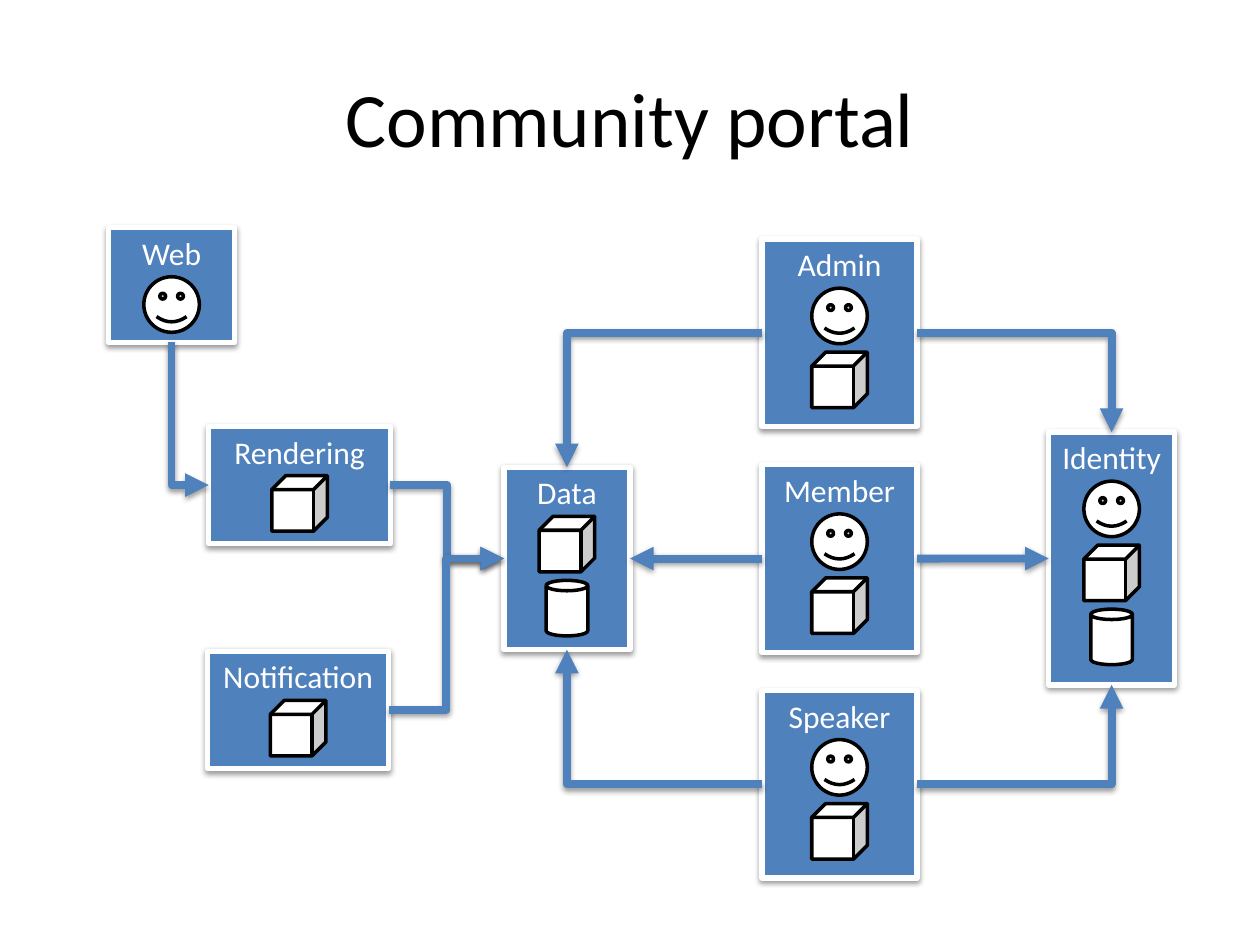
"""Build the community portal component diagram."""
from dataclasses import dataclass
from typing import Any

from pptx import Presentation
from pptx.dml.color import RGBColor
from pptx.enum.shapes import MSO_CONNECTOR, MSO_SHAPE
from pptx.enum.text import MSO_ANCHOR, PP_ALIGN
from pptx.oxml import parse_xml
from pptx.oxml.ns import nsdecls, qn
from pptx.util import Cm, Pt


@dataclass(frozen=True)
class Theme:
    """Colours, type sizes and line widths."""
    blue: RGBColor = RGBColor(0x4F, 0x81, 0xBD)
    white: RGBColor = RGBColor(0xFF, 0xFF, 0xFF)
    black: RGBColor = RGBColor(0, 0, 0)
    font: str = "Calibri"
    title_size: float = 44
    label_size: float = 18
    box_line: float = 3
    icon_line: float = 2
    arrow_line: float = 4.5


@dataclass(frozen=True)
class Component:
    """A labelled box with a column of icons, in centimetres."""
    name: str
    left: float
    top: float
    width: float
    height: float
    icons: tuple[MSO_SHAPE, ...]


@dataclass(frozen=True)
class Link:
    """An arrow between connection sites of two components."""
    start: str
    start_site: int
    end: str
    end_site: int
    preset: str = "bentConnector2"
    arrow: str = "tailEnd"


THEME = Theme()
TOP, LEFT, BOTTOM, RIGHT = range(4)
FACE, CUBE, CAN = MSO_SHAPE.SMILEY_FACE, MSO_SHAPE.CUBE, MSO_SHAPE.CAN
ICON_SIZE, CAN_WIDTH, ICON_OFFSET, ICON_PITCH = 1.12, 0.84, 0.99, 1.29
PORTAL_TOP, PORTAL_PITCH = 4.82, 4.55
PORTALS = ("Admin", "Member", "Speaker")

COMPONENTS = (
    Component("Identity", 21.14, 8.71, 2.54, 5.1, (FACE, CUBE, CAN)),
    Component("Web", 2.19, 4.59, 2.54, 2.31, (FACE,)),
    Component("Data", 10.16, 9.42, 2.54, 3.68, (CUBE, CAN)),
    Component("Notification", 4.18, 13.13, 3.66, 2.36, (CUBE,)),
    Component("Rendering", 4.21, 8.6, 3.66, 2.36, (CUBE,)),
    *(Component(name, 15.36, PORTAL_TOP + row * PORTAL_PITCH, 3.13, 3.78, (FACE, CUBE))
      for row, name in enumerate(PORTALS)),
)

LINKS = (
    Link("Admin", RIGHT, "Identity", TOP),
    Link("Speaker", RIGHT, "Identity", BOTTOM),
    Link("Member", RIGHT, "Identity", LEFT, "line"),
    Link("Member", LEFT, "Data", RIGHT, "line"),
    Link("Admin", LEFT, "Data", TOP),
    Link("Speaker", LEFT, "Data", BOTTOM),
    Link("Rendering", LEFT, "Web", BOTTOM, arrow="headEnd"),
    Link("Rendering", RIGHT, "Data", LEFT, "bentConnector3"),
    Link("Notification", RIGHT, "Data", LEFT, "bentConnector3"),
)


def apply_format(target: Any, values: dict[str, Any]) -> None:
    """Set each named attribute on the target."""
    for name, value in values.items():
        setattr(target, name, value)


def format_text(shape: Any, text: str, size: float, color: RGBColor) -> None:
    """Write one centred line in the theme font."""
    shape.text_frame.text = text
    paragraph = shape.text_frame.paragraphs[0]
    paragraph.alignment = PP_ALIGN.CENTER
    apply_format(paragraph.runs[0].font, {"name": THEME.font, "size": Pt(size)})
    paragraph.runs[0].font.color.rgb = color


def format_line(shape: Any, color: RGBColor, width: float) -> None:
    """Set the colour and width of an outline or connector."""
    shape.line.color.rgb = color
    shape.line.width = Pt(width)


def add_shadow(shape: Any) -> None:
    """Give the shape a soft shadow straight below it."""
    shape.element.spPr.append(parse_xml(
        f'<a:effectLst {nsdecls("a")}><a:outerShdw blurRad="40000" dist="20000" '
        'dir="5400000" rotWithShape="0"><a:srgbClr val="000000">'
        '<a:alpha val="38000"/></a:srgbClr></a:outerShdw></a:effectLst>'))


def draw_icon(group: Any, kind: MSO_SHAPE, center: float, top: float) -> None:
    """Draw a white icon centred on a vertical axis."""
    width = CAN_WIDTH if kind == CAN else ICON_SIZE
    icon = group.shapes.add_shape(
        kind, Cm(center - width / 2), Cm(top), Cm(width), Cm(ICON_SIZE))
    icon.shadow.inherit = False
    icon.fill.solid()
    icon.fill.fore_color.rgb = THEME.white
    format_line(icon, THEME.black, THEME.icon_line)


def draw_component(slide: Any, component: Component) -> Any:
    """Draw a grouped component and return its box."""
    group = slide.shapes.add_group_shape()
    box = group.shapes.add_shape(
        MSO_SHAPE.RECTANGLE, Cm(component.left), Cm(component.top),
        Cm(component.width), Cm(component.height))
    box.fill.solid()
    box.fill.fore_color.rgb = THEME.blue
    format_line(box, THEME.white, THEME.box_line)
    add_shadow(box)
    apply_format(box.text_frame, {"vertical_anchor": MSO_ANCHOR.TOP, "word_wrap": True})
    format_text(box, component.name, THEME.label_size, THEME.white)
    for row, kind in enumerate(component.icons):
        draw_icon(group, kind, component.left + component.width / 2,
                  component.top + ICON_OFFSET + row * ICON_PITCH)
    return box


def draw_link(slide: Any, link: Link, boxes: dict[str, Any]) -> None:
    """Draw an arrow joined to two component boxes."""
    kind = MSO_CONNECTOR.STRAIGHT if link.preset == "line" else MSO_CONNECTOR.ELBOW
    connector = slide.shapes.add_connector(kind, 0, 0, 0, 0)
    connector.begin_connect(boxes[link.start], link.start_site)
    connector.end_connect(boxes[link.end], link.end_site)
    format_line(connector, THEME.blue, THEME.arrow_line)
    properties = connector.element.spPr
    properties.find(qn("a:prstGeom")).set("prst", link.preset)
    properties.find(qn("a:ln")).append(
        parse_xml(f'<a:{link.arrow} {nsdecls("a")} type="triangle"/>'))
    add_shadow(connector)


def main() -> None:
    """Build and save the presentation."""
    presentation = Presentation()
    apply_format(presentation, {"slide_width": Cm(25.4), "slide_height": Cm(19.05)})
    slide = presentation.slides.add_slide(presentation.slide_layouts[5])
    title = slide.shapes.title
    apply_format(title, {"left": Cm(1.27), "top": Cm(0.76),
                         "width": Cm(22.86), "height": Cm(3.18)})
    title.text_frame.vertical_anchor = MSO_ANCHOR.MIDDLE
    format_text(title, "Community portal", THEME.title_size, THEME.black)
    boxes = {component.name: draw_component(slide, component) for component in COMPONENTS}
    for link in LINKS:
        draw_link(slide, link, boxes)
    presentation.save("out.pptx")


if __name__ == "__main__":
    main()
